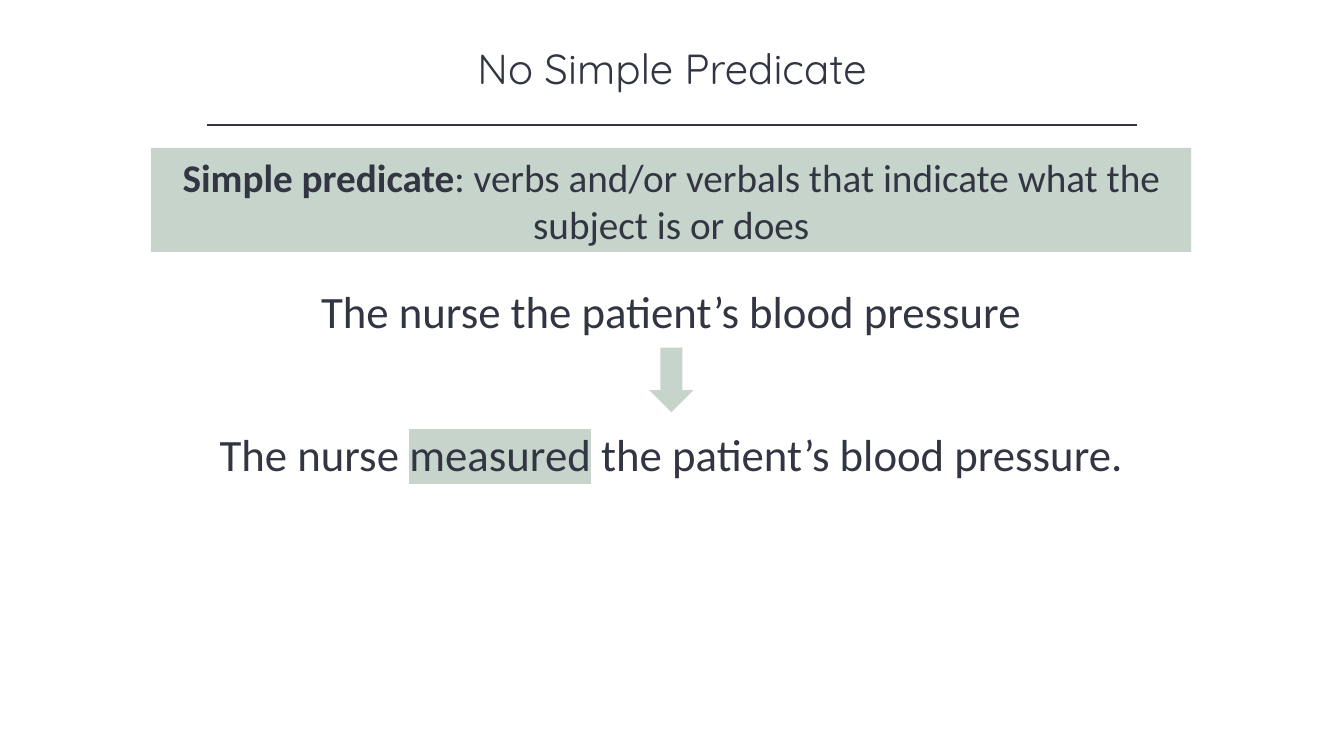
from dataclasses import dataclass

from lxml.etree import SubElement
from pptx import Presentation
from pptx.dml.color import RGBColor
from pptx.enum.shapes import MSO_CONNECTOR as Connector, MSO_SHAPE as Shape
from pptx.enum.text import MSO_ANCHOR as Anchor, MSO_AUTO_SIZE as AutoSize, PP_ALIGN as Align
from pptx.oxml import parse_xml
from pptx.oxml.ns import nsdecls, qn
from pptx.util import Cm, Pt


@dataclass(frozen=True)
class Theme:
    ink: str = "323542"
    sage: str = "C7D4CB"
    paper: str = "FFFFFF"
    title_font: str = "Quicksand"
    body_font: str = "Calibri"
    title_size: int = 30
    definition_size: int = 28
    sentence_size: int = 32
    sentence_gap: int = 18
    rule_width: int = 1


@dataclass(frozen=True)
class Box:
    """A region of the slide, in centimetres."""
    left: float
    top: float
    width: float
    height: float

    def centred(self, top, width, height):
        left = self.left + (self.width - width) / 2
        return Box(left, self.top + top, width, height)

    def lengths(self):
        return Cm(self.left), Cm(self.top), Cm(self.width), Cm(self.height)


THEME = Theme()


def color(value):
    return RGBColor.from_string(value)


def add_run(para, text, font, size, bold=False, highlight=None):
    span = para.add_run()
    span.text = text
    span.font.name = font
    span.font.size = Pt(size)
    span.font.bold = bold
    span.font.color.rgb = color(THEME.ink)
    if highlight:
        mark = parse_xml(f'<a:highlight {nsdecls("a")}><a:srgbClr val="{highlight}"/></a:highlight>')
        span.font.fill  # the highlight has to follow the fill
        span._r.rPr.find(qn("a:solidFill")).addnext(mark)


def centred_paragraph(shape, anchor):
    frame = shape.text_frame
    frame.word_wrap = True
    frame.vertical_anchor = anchor
    para = frame.paragraphs[0]
    para.alignment = Align.CENTER
    return para


def add_text_box(page, box, anchor):
    shape = page.shapes.add_textbox(*box.lengths())
    para = centred_paragraph(shape, anchor)
    shape.text_frame.auto_size = AutoSize.SHAPE_TO_FIT_TEXT
    return para


def add_sage_shape(page, kind, box):
    shape = page.shapes.add_shape(kind, *box.lengths())
    shape.shadow.inherit = False
    shape.fill.solid()
    shape.fill.fore_color.rgb = color(THEME.sage)
    shape.line.fill.background()
    return shape


def add_header(page, box, title):
    # Title
    para = add_text_box(page, box.centred(0, box.width, 1.55), Anchor.TOP)
    add_run(para, title, THEME.title_font, THEME.title_size)
    # Rule along the bottom of the region
    left, top, width, _ = box.centred(box.height, 23.42, 0).lengths()
    rule = page.shapes.add_connector(Connector.STRAIGHT, left, top, left + width, top)
    rule.line.color.rgb = color(THEME.ink)
    rule.line.width = Pt(THEME.rule_width)
    SubElement(rule._element.spPr, qn("a:effectLst"))


def add_definition(page, box, term, meaning):
    banner = add_sage_shape(page, Shape.RECTANGLE, box)
    para = centred_paragraph(banner, Anchor.MIDDLE)
    add_run(para, term, THEME.body_font, THEME.definition_size, bold=True)
    add_run(para, meaning, THEME.body_font, THEME.definition_size)


def add_correction(page, box, faulty, corrected):
    row = 1.63
    # Faulty sentence at the top, corrected one at the bottom
    sentences = ((0, 19.15, faulty), (box.height - row, box.width, corrected))
    for top, width, parts in sentences:
        para = add_text_box(page, box.centred(top, width, row), Anchor.MIDDLE)
        para.space_after = Pt(THEME.sentence_gap)
        for text, highlight in parts:
            add_run(para, text, THEME.body_font, THEME.sentence_size, highlight=highlight)
    # Arrow between them
    add_sage_shape(page, Shape.DOWN_ARROW, box.centred(1.75, 1.12, row))


def main():
    deck = Presentation()
    deck.slide_width, deck.slide_height = Cm(33.87), Cm(19.05)
    page = deck.slides.add_slide(deck.slide_layouts[6])
    page.background.fill.solid()
    page.background.fill.fore_color.rgb = color(THEME.paper)

    add_header(page, Box(4.24, 0.94, 25.4, 2.21), "No Simple Predicate")
    add_definition(
        page, Box(3.81, 3.73, 26.21, 2.62), "Simple predicate",
        ": verbs and/or verbals that indicate what the subject is or does",
    )
    add_correction(
        page, Box(4.98, 7.01, 23.88, 5.24),
        faulty=[("The nurse the patient’s blood pressure", None)],
        corrected=[
            ("The nurse ", None),
            ("measured", THEME.sage),
            (" the patient’s blood pressure.", None),
        ],
    )
    deck.save("out.pptx")


if __name__ == "__main__":
    main()
